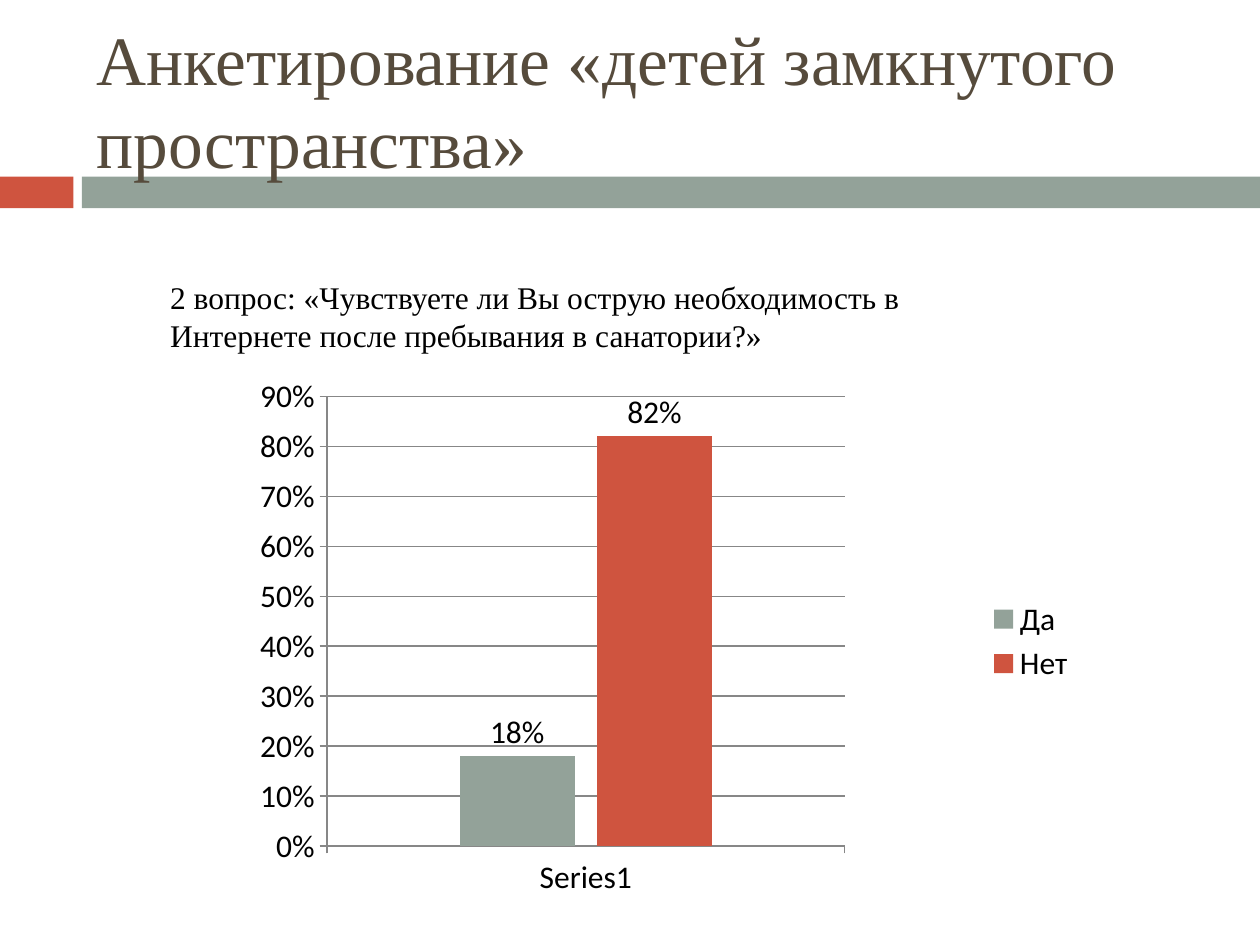
from lxml import etree
from pptx import Presentation
from pptx.chart.data import CategoryChartData
from pptx.dml.color import RGBColor
from pptx.enum.chart import XL_CHART_TYPE as ChartType, XL_LABEL_POSITION as LabelPos
from pptx.enum.chart import XL_LEGEND_POSITION as LegendPos, XL_TICK_MARK as Tick
from pptx.enum.shapes import MSO_SHAPE as Shape
from pptx.enum.text import MSO_ANCHOR as Anchor
from pptx.oxml.ns import qn
from pptx.util import Cm, Pt

SAGE, RED, BROWN, BLACK, GREY = "93A299", "CF543F", "564B3C", "000000", "878787"
ANSWERS = [("Да", 0.18, SAGE), ("Нет", 0.82, RED)]


def rgb(value):
    return RGBColor.from_string(value)


def add_text(slide, box, text, size, color, anchor=Anchor.TOP):
    tf = slide.shapes.add_textbox(*map(Cm, box)).text_frame
    tf.word_wrap = True
    tf.vertical_anchor = anchor
    p = tf.paragraphs[0]
    p.text = text
    p.font.name = "Times New Roman"
    p.font.size = Pt(size)
    p.font.color.rgb = rgb(color)


def add_band(slide, box, block=1.48, gap=0.17):
    """Draw a short red block, a gap and a sage bar filling the rest."""
    x, y, w, h = box
    start = block + gap
    for left, width, color in [(x, block, RED), (x + start, w - start, SAGE)]:
        sp = slide.shapes.add_shape(Shape.RECTANGLE, Cm(left), Cm(y), Cm(width), Cm(h))
        sp.shadow.inherit = False
        sp.fill.solid()
        sp.fill.fore_color.rgb = rgb(color)
        sp.line.fill.background()


def set_plot_layout(chart, x, y, w, h):
    """Fix the inner plot area, in fractions of the chart."""
    area = chart._chartSpace.chart.plotArea
    for old in area.findall(qn("c:layout")):
        area.remove(old)
    layout = etree.Element(qn("c:layout"))
    manual = etree.SubElement(layout, qn("c:manualLayout"))
    settings = [("layoutTarget", "inner"), ("xMode", "edge"), ("yMode", "edge"),
                ("x", x), ("y", y), ("w", w), ("h", h)]
    for tag, value in settings:
        etree.SubElement(manual, qn(f"c:{tag}")).set("val", str(value))
    area.insert(0, layout)


def style_axis(axis):
    axis.major_tick_mark = Tick.OUTSIDE
    axis.minor_tick_mark = Tick.NONE
    axis.format.line.color.rgb = rgb(GREY)


def add_answer_chart(slide, box):
    data = CategoryChartData(number_format="0%")
    data.categories = ["Series1"]
    for name, share, _ in ANSWERS:
        data.add_series(name, [share])
    chart = slide.shapes.add_chart(ChartType.COLUMN_CLUSTERED, *map(Cm, box), data).chart
    chart.has_title = False
    chart.font.name = "Calibri"
    chart.font.size = Pt(18)
    chart.font.color.rgb = rgb(BLACK)
    chart.has_legend = True
    chart.legend.position = LegendPos.RIGHT
    chart.legend.include_in_layout = False
    set_plot_layout(chart, 0.087, 0.062, 0.621, 0.804)

    style_axis(chart.category_axis)
    axis = chart.value_axis
    style_axis(axis)
    axis.minimum_scale, axis.maximum_scale, axis.major_unit = 0, 0.9, 0.1
    axis.has_major_gridlines = True
    axis.major_gridlines.format.line.color.rgb = rgb(GREY)
    axis.tick_labels.number_format = "0%"
    axis.tick_labels.number_format_is_linked = False

    plot = chart.plots[0]
    plot.vary_by_categories = False
    plot.gap_width, plot.overlap = 230, -19
    for series, (_, _, color) in zip(plot.series, ANSWERS):
        series.format.fill.solid()
        series.format.fill.fore_color.rgb = rgb(color)
        labels = series.data_labels
        labels.show_value = True
        labels.number_format = "0%"
        labels.number_format_is_linked = False
        labels.position = LabelPos.OUTSIDE_END


def main():
    prs = Presentation()
    prs.slide_width, prs.slide_height = Cm(25.4), Cm(19.05)
    slide = prs.slides.add_slide(prs.slide_layouts[6])
    add_band(slide, (0, 3.56, 25.4, 0.64))
    add_text(slide, (3.18, 5.49, 16.79, 1.8),
             "2 вопрос: «Чувствуете ли Вы острую необходимость в "
             "Интернете после пребывания в санатории?»", 18, BLACK)
    add_answer_chart(slide, (5.13, 7.29, 16.81, 11.28))
    add_text(slide, (1.7, 0.64, 22.66, 2.74),
             "Анкетирование «детей замкнутого пространства»", 39.6, BROWN, Anchor.MIDDLE)
    prs.save("out.pptx")


if __name__ == "__main__":
    main()
